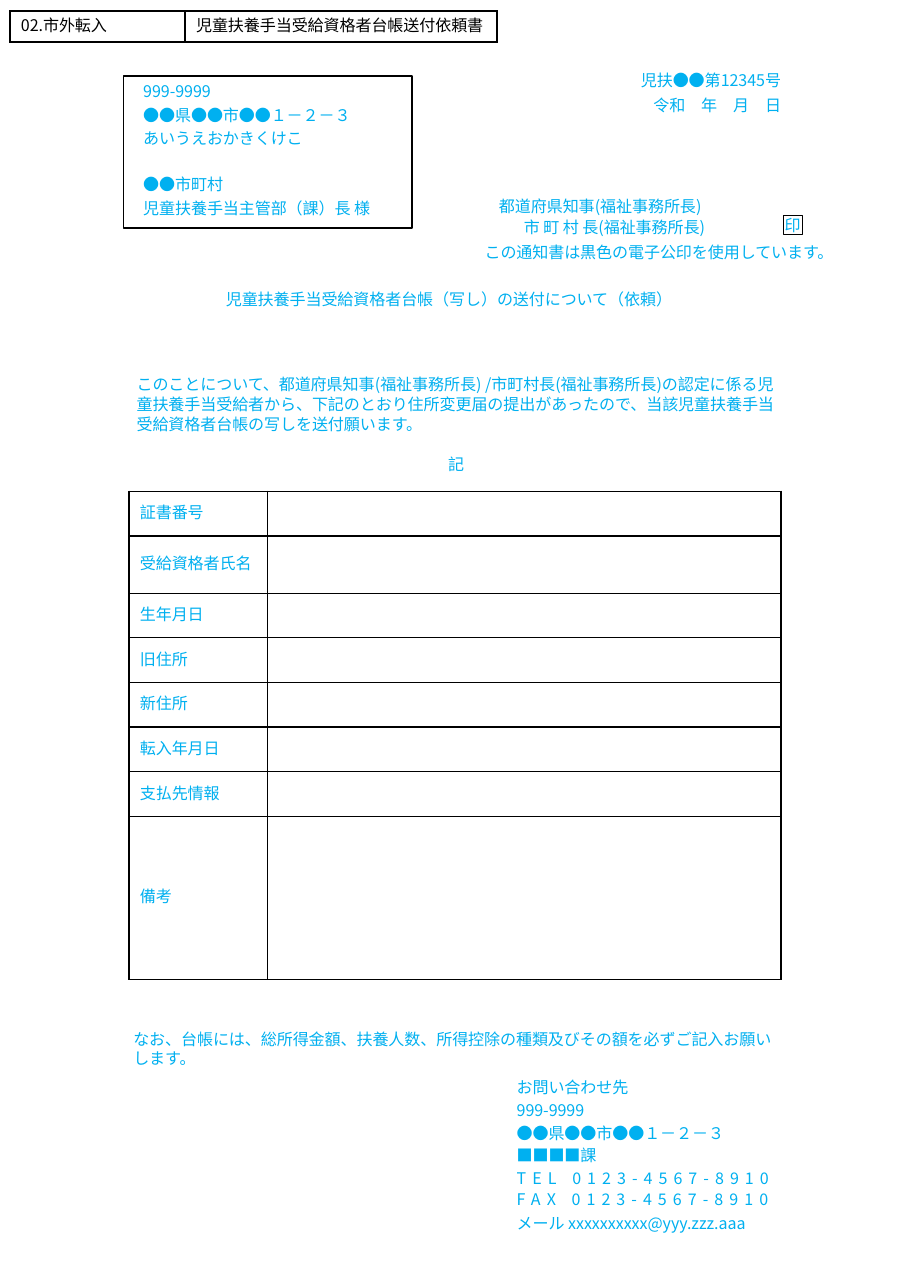
from dataclasses import dataclass

import pptx
import pptx.dml.color
import pptx.enum.shapes
import pptx.enum.text
import pptx.oxml.ns
import pptx.util
from lxml import etree
from pptx.util import Inches

ALIGN = pptx.enum.text.PP_ALIGN
ANCHOR = pptx.enum.text.MSO_ANCHOR
qn = pptx.oxml.ns.qn


@dataclass(frozen=True)
class Theme:
    font: str = "Noto Sans CJK JP"
    size: float = 10.5
    line_height: float = 12.8
    form_color: str = "00B0F0"
    ink: str = "000000"
    border: float = 1
    thin_border: float = 0.5


THEME = Theme()
LABEL_INSETS = (0.01, 0.01, 0, 0)


def rgb(value):
    return pptx.dml.color.RGBColor.from_string(value)


def write(frame, text, color=THEME.form_color, align=ALIGN.LEFT, anchor=ANCHOR.TOP,
          insets=LABEL_INSETS, wrap=True, line_height=THEME.line_height,
          before=1.1, gaps=None, tracking=None):
    frame.word_wrap = wrap
    frame.auto_size = pptx.enum.text.MSO_AUTO_SIZE.NONE
    frame.vertical_anchor = anchor
    (frame.margin_left, frame.margin_top,
     frame.margin_right, frame.margin_bottom) = map(Inches, insets)
    lines = [text] if isinstance(text, str) else text
    for index, line in enumerate(lines):
        paragraph = frame.add_paragraph() if index else frame.paragraphs[0]
        paragraph.text = line
        paragraph.alignment = align
        paragraph.line_spacing = pptx.util.Pt(line_height)
        space = (gaps or {}).get(index, before) if index else 0
        paragraph.space_before = pptx.util.Pt(space)
        for run in paragraph.runs:
            run.font.name = THEME.font
            run.font.size = pptx.util.Pt(THEME.size)
            run.font.color.rgb = rgb(color)
            properties = run.font._element
            east_asian = etree.SubElement(properties, qn("a:ea"))
            east_asian.set("typeface", THEME.font)
            if tracking and index in tracking:
                properties.set("spc", str(tracking[index] * 100))


def add_label(slide, left, top, width, height, text, **text_format):
    label = slide.shapes.add_textbox(*map(Inches, (left, top, width, height)))
    write(label.text_frame, text, **text_format)


def add_frame(slide, left, top, width, height, text, border, **text_format):
    frame = slide.shapes.add_shape(
        pptx.enum.shapes.MSO_SHAPE.RECTANGLE,
        *map(Inches, (left, top, width, height)))
    frame.shadow.inherit = False
    frame.fill.background()
    frame.line.color.rgb = rgb(THEME.ink)
    frame.line.width = pptx.util.Pt(border)
    write(frame.text_frame, text, **text_format)


def set_borders(cell):
    properties = cell._tc.get_or_add_tcPr()
    for index, side in enumerate(("lnL", "lnR", "lnT", "lnB")):
        line = etree.Element(qn("a:" + side))
        line.set("w", str(pptx.util.Pt(THEME.border)))
        fill = etree.SubElement(line, qn("a:solidFill"))
        etree.SubElement(fill, qn("a:srgbClr")).set("val", THEME.ink)
        properties.insert(index, line)


def add_form_table(slide, left, top, columns, heights, rows, **text_format):
    table = slide.shapes.add_table(
        len(rows), len(columns), Inches(left), Inches(top),
        Inches(sum(columns)), Inches(sum(heights))).table
    table.first_row = False
    table.horz_banding = False
    for column, width in zip(table.columns, columns):
        column.width = Inches(width)
    for row, height, entries in zip(table.rows, heights, rows):
        row.height = Inches(height)
        for cell, entry in zip(row.cells, entries):
            cell.fill.background()
            set_borders(cell)
            cell.vertical_anchor = ANCHOR.MIDDLE
            cell.margin_top = cell.margin_bottom = 0
            if entry:
                write_cell(cell, entry, **text_format)


def write_cell(cell, entry, **text_format):
    write(cell.text_frame, entry, insets=(0.1, 0, 0.1, 0),
          anchor=ANCHOR.MIDDLE, **text_format)
    cell.vertical_anchor = ANCHOR.MIDDLE
    cell.margin_left = cell.margin_right = Inches(0.1)
    cell.margin_top = cell.margin_bottom = 0


def place_title(slide, left, top, width, height, text):
    title = slide.shapes.title
    title.left, title.top, title.width, title.height = map(
        Inches, (left, top, width, height))
    write(title.text_frame, text)


def main():
    presentation = pptx.Presentation()
    presentation.slide_width = Inches(8.26)
    presentation.slide_height = Inches(11.69)
    slide = presentation.slides.add_slide(presentation.slide_layouts[5])

    place_title(slide, 2.04, 2.61, 4.23, 0.19,
                "児童扶養手当受給資格者台帳（写し）の送付について（依頼）")
    add_form_table(slide, 0.09, 0.1, [1.59, 2.83], [0.28],
                   [("02.市外転入", "児童扶養手当受給資格者台帳送付依頼書")],
                   color=THEME.ink)

    add_label(slide, 5.71, 0.63, 1.38, 0.19, "児扶●●第12345号", align=ALIGN.RIGHT)
    add_label(slide, 5.8, 0.85, 1.29, 0.19, "令和　年　月　日", align=ALIGN.RIGHT)
    add_frame(slide, 1.12, 0.69, 2.62, 1.38,
              ["999-9999", "●●県●●市●●１－２－３", "あいうえおかきくけこ",
               "●●市町村", "児童扶養手当主管部（課）長 様"],
              THEME.border, insets=(0.18, 0.05, 0.1, 0.05), before=2.4, gaps={3: 17.6})

    add_label(slide, 4.16, 1.77, 2.24, 0.38,
              ["都道府県知事(福祉事務所長) ", "市 町 村 長(福祉事務所長)"],
              align=ALIGN.RIGHT)
    add_frame(slide, 7.11, 1.96, 0.17, 0.17, "印", THEME.thin_border,
              insets=(0, 0, 0, 0), align=ALIGN.CENTER, anchor=ANCHOR.MIDDLE)
    add_label(slide, 4.16, 2.19, 3.41, 0.19,
              "この通知書は黒色の電子公印を使用しています。", align=ALIGN.RIGHT)

    add_label(slide, 1.23, 3.39, 5.81, 0.54,
              "このことについて、都道府県知事(福祉事務所長) /市町村長(福祉事務所長)の認定に係る"
              "児童扶養手当受給者から、下記のとおり住所変更届の提出があったので、"
              "当該児童扶養手当受給資格者台帳の写しを送付願います。")
    add_label(slide, 1.23, 4.11, 5.81, 0.19, "記", align=ALIGN.CENTER)

    items = ["証書番号", "受給資格者氏名", "生年月日", "旧住所", "新住所",
             "転入年月日", "支払先情報", "備考"]
    tall_rows = {"受給資格者氏名": 0.52, "備考": 1.48}
    plain_height = (4.43 - sum(tall_rows.values())) / (len(items) - len(tall_rows))
    add_form_table(slide, 1.17, 4.46, [1.26, 4.66],
                   [tall_rows.get(item, plain_height) for item in items],
                   [(item, "") for item in items], align=ALIGN.JUSTIFY)

    add_label(slide, 1.2, 9.33, 5.89, 0.37,
              "なお、台帳には、総所得金額、扶養人数、所得控除の種類及びその額を必ずご記入お願いします。")
    add_label(slide, 4.51, 9.78, 2.58, 1.38,
              ["お問い合わせ先", "999-9999", "●●県●●市●●１－２－３\v■■■■課",
               "TEL 0123-4567-8910\vFAX 0123-4567-8910",
               "メール xxxxxxxxxx@yyy.zzz.aaa"],
              insets=(0.18, 0.05, 0.1, 0.05), anchor=ANCHOR.MIDDLE, wrap=False,
              line_height=14, before=1.2, tracking={3: 4})

    presentation.save("out.pptx")


if __name__ == "__main__":
    main()
